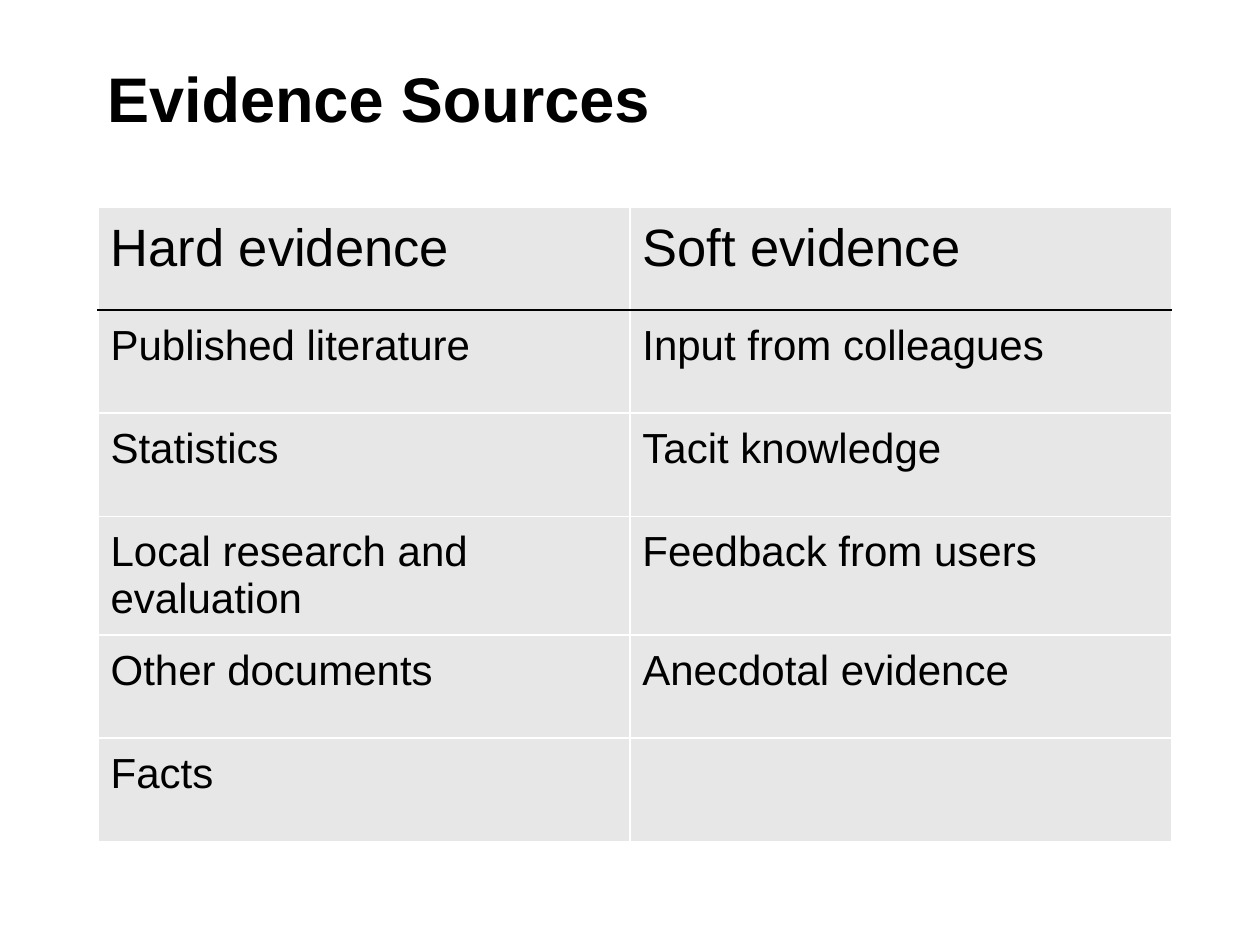
from lxml import etree
from pptx import Presentation
from pptx import util as u
from pptx.dml.color import RGBColor
from pptx.enum import text
from pptx.oxml import ns

BLACK = RGBColor(0x00, 0x00, 0x00)
WHITE = RGBColor(0xFF, 0xFF, 0xFF)
GREY = RGBColor(0xE7, 0xE7, 0xE7)
INSET = u.Cm(0.25)
ROW_HEIGHT = u.Cm(2.08)
COLUMN_WIDTHS = [u.Cm(10.72), u.Cm(10.92)]

EVIDENCE = [
    ("Hard evidence", "Soft evidence"),
    ("Published literature", "Input from colleagues"),
    ("Statistics", "Tacit knowledge"),
    ("Local research and evaluation", "Feedback from users"),
    ("Other documents", "Anecdotal evidence"),
    ("Facts", ""),
]


def write_text(tf, content, size=24, bold=False, color=BLACK):
    p = tf.paragraphs[0]
    p.alignment = text.PP_ALIGN.LEFT
    p.font.size = u.Pt(size)
    if content:
        r = p.add_run()
        r.text = content
        r.font.name = "Arial"
        r.font.size = u.Pt(size)
        r.font.bold = bold
        r.font.color.rgb = color
    return p


def set_insets(box):
    box.margin_left = box.margin_right = INSET
    box.margin_top = box.margin_bottom = INSET


def set_borders(cell, **colors):
    tc_pr = cell._tc.get_or_add_tcPr()
    for index, side in enumerate("LRTB"):
        ln = etree.Element(ns.qn("a:ln" + side), w=str(u.Pt(1)))
        fill = etree.SubElement(ln, ns.qn("a:solidFill"))
        etree.SubElement(fill, ns.qn("a:srgbClr"), val=str(colors.get(side, WHITE)))
        tc_pr.insert(index, ln)


def add_title(slide, content):
    sp = slide.shapes.title
    sp.left, sp.top = u.Cm(1.27), u.Cm(0.76)
    sp.width, sp.height = u.Cm(22.86), u.Cm(2.21)
    tf = sp.text_frame
    tf.vertical_anchor = text.MSO_ANCHOR.BOTTOM
    set_insets(tf)
    p = write_text(tf, content, size=36, bold=True)
    p_pr = p._p.get_or_add_pPr()
    p_pr.set("marL", "0")
    p_pr.set("indent", str(u.Cm(0.64)))


def add_evidence_table(slide, rows):
    frame = slide.shapes.add_table(
        len(rows), len(COLUMN_WIDTHS), u.Cm(1.98), u.Cm(4.17),
        sum(COLUMN_WIDTHS), ROW_HEIGHT * len(rows))
    table = frame.table
    table.first_row = table.horz_banding = False
    for column, width in zip(table.columns, COLUMN_WIDTHS):
        column.width = width
    for i, row in enumerate(rows):
        table.rows[i].height = ROW_HEIGHT
        rule = {0: {"B": BLACK}, 1: {"T": BLACK}}.get(i, {})
        for j, content in enumerate(row):
            cell = table.cell(i, j)
            set_insets(cell)
            cell.fill.solid()
            cell.fill.fore_color.rgb = GREY
            set_borders(cell, **rule)
            write_text(cell.text_frame, content, size=24 if i else 30)


def main():
    prs = Presentation()
    prs.slide_width, prs.slide_height = u.Cm(25.4), u.Cm(19.05)
    slide = prs.slides.add_slide(prs.slide_layouts.get_by_name("Title Only"))
    add_title(slide, "Evidence Sources")
    add_evidence_table(slide, EVIDENCE)
    prs.save("out.pptx")


if __name__ == "__main__":
    main()
